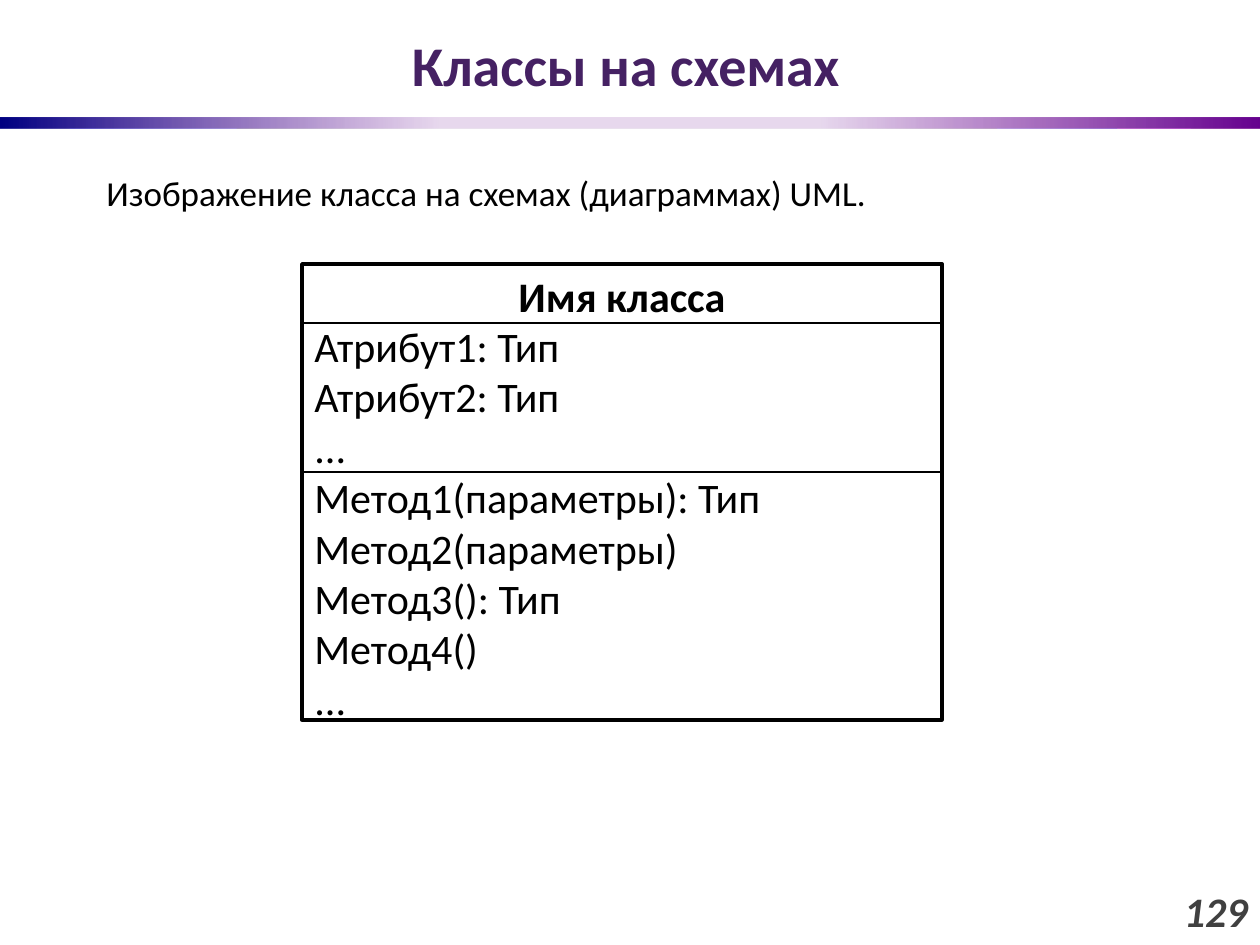
import dataclasses

import lxml.etree
import pptx
import pptx.dml.color
import pptx.enum.shapes
import pptx.enum.text
import pptx.oxml.ns
import pptx.util

EMU_PER_PX = 914400 / 126
ALIGN = pptx.enum.text.PP_ALIGN
ANCHOR = pptx.enum.text.MSO_ANCHOR
RECTANGLE = pptx.enum.shapes.MSO_SHAPE.RECTANGLE


@dataclasses.dataclass(frozen=True)
class Theme:
    font: str = "Calibri"
    title: str = "452163"
    ink: str = "000000"
    paper: str = "FFFFFF"
    number: str = "404040"
    title_size: int = 32
    class_size: int = 24
    body_size: int = 20
    # position %, colour, opacity %
    band: tuple = ((0, "000082", 100), (35, "66008F", 15),
                   (65, "66008F", 15), (100, "66008F", 100))


THEME = Theme()


def px(*lengths):
    return [pptx.util.Emu(round(length * EMU_PER_PX)) for length in lengths]


def rgb(value):
    return pptx.dml.color.RGBColor.from_string(value)


def write(frame, text, *, size, color=THEME.ink, bold=False, italic=False,
          align=ALIGN.LEFT, space_after=0, first=True):
    """Write text as one paragraph, in the frame's first or in a new one."""
    paragraph = frame.paragraphs[0] if first else frame.add_paragraph()
    paragraph.alignment = align
    paragraph.space_after = pptx.util.Pt(space_after)
    run = paragraph.add_run()
    run.text = text
    run.font.name = THEME.font
    run.font.size = pptx.util.Pt(size)
    run.font.bold, run.font.italic = bold, italic
    run.font.color.rgb = rgb(color)


def add_label(slide, box, text, anchor=ANCHOR.MIDDLE, **text_format):
    frame = slide.shapes.add_textbox(*px(*box)).text_frame
    frame.word_wrap = True
    frame.vertical_anchor = anchor
    write(frame, text, **text_format)


def add_band(slide, box):
    """Add the bar whose gradient fades towards its middle."""
    band = slide.shapes.add_shape(RECTANGLE, *px(*box))
    band.shadow.inherit = False
    band.line.fill.background()
    band.fill.gradient()
    band.fill.gradient_angle = 0
    qn = pptx.oxml.ns.qn
    stops = band._element.spPr.find(qn("a:gradFill")).find(qn("a:gsLst"))
    for stop in list(stops):
        stops.remove(stop)
    for position, color, opacity in THEME.band:
        stop = lxml.etree.SubElement(stops, qn("a:gs"), pos=str(position * 1000))
        fill = lxml.etree.SubElement(stop, qn("a:srgbClr"), val=color)
        if opacity < 100:
            lxml.etree.SubElement(fill, qn("a:alpha"), val=str(opacity * 1000))


def add_divider(shapes, left, right, y):
    line = shapes.add_connector(pptx.enum.shapes.MSO_CONNECTOR.STRAIGHT,
                                *px(left, y, right, y))
    line.line.color.rgb = rgb(THEME.ink)
    line.line.width = pptx.util.Pt(1.5)
    lxml.etree.SubElement(line._element.spPr, pptx.oxml.ns.qn("a:effectLst"))


def add_class_diagram(slide, box, name, members, divider_offsets):
    left, top, width, height = box
    shapes = slide.shapes.add_group_shape().shapes
    frame_shape = shapes.add_shape(RECTANGLE, *px(left, top, width, height))
    frame_shape.shadow.inherit = False
    frame_shape.fill.solid()
    frame_shape.fill.fore_color.rgb = rgb(THEME.paper)
    frame_shape.line.color.rgb = rgb(THEME.ink)
    frame_shape.line.width = pptx.util.Pt(2)
    frame = frame_shape.text_frame
    frame.word_wrap = True
    frame.vertical_anchor = ANCHOR.TOP
    write(frame, name, size=THEME.class_size, bold=True, align=ALIGN.CENTER)
    for member in members:
        write(frame, member, size=THEME.class_size, first=False)
    for offset in divider_offsets:
        add_divider(shapes, left, left + width, top + offset)


def main():
    presentation = pptx.Presentation()
    presentation.slide_width, presentation.slide_height = px(1260, 945)
    slide = presentation.slides.add_slide(presentation.slide_layouts[6])

    add_band(slide, (0, 118, 1260, 10))
    add_label(slide, (59, 0, 1134, 128), "Классы на схемах",
              size=THEME.title_size, color=THEME.title, bold=True,
              align=ALIGN.CENTER)
    add_label(slide, (1142, 876, 118, 69), "129", size=THEME.class_size,
              color=THEME.number, bold=True, italic=True, align=ALIGN.RIGHT)
    attributes = ["Атрибут1: Тип", "Атрибут2: Тип", "..."]
    methods = ["Метод1(параметры): Тип", "Метод2(параметры)",
               "Метод3(): Тип", "Метод4()", "..."]
    add_class_diagram(slide, (302, 264, 640, 456), "Имя класса",
                      attributes + methods, divider_offsets=(59, 208))
    add_label(slide, (94, 165, 1081, 55),
              "Изображение класса на схемах (диаграммах) UML.",
              anchor=ANCHOR.TOP, size=THEME.body_size, space_after=6)

    presentation.save("out.pptx")


if __name__ == "__main__":
    main()
